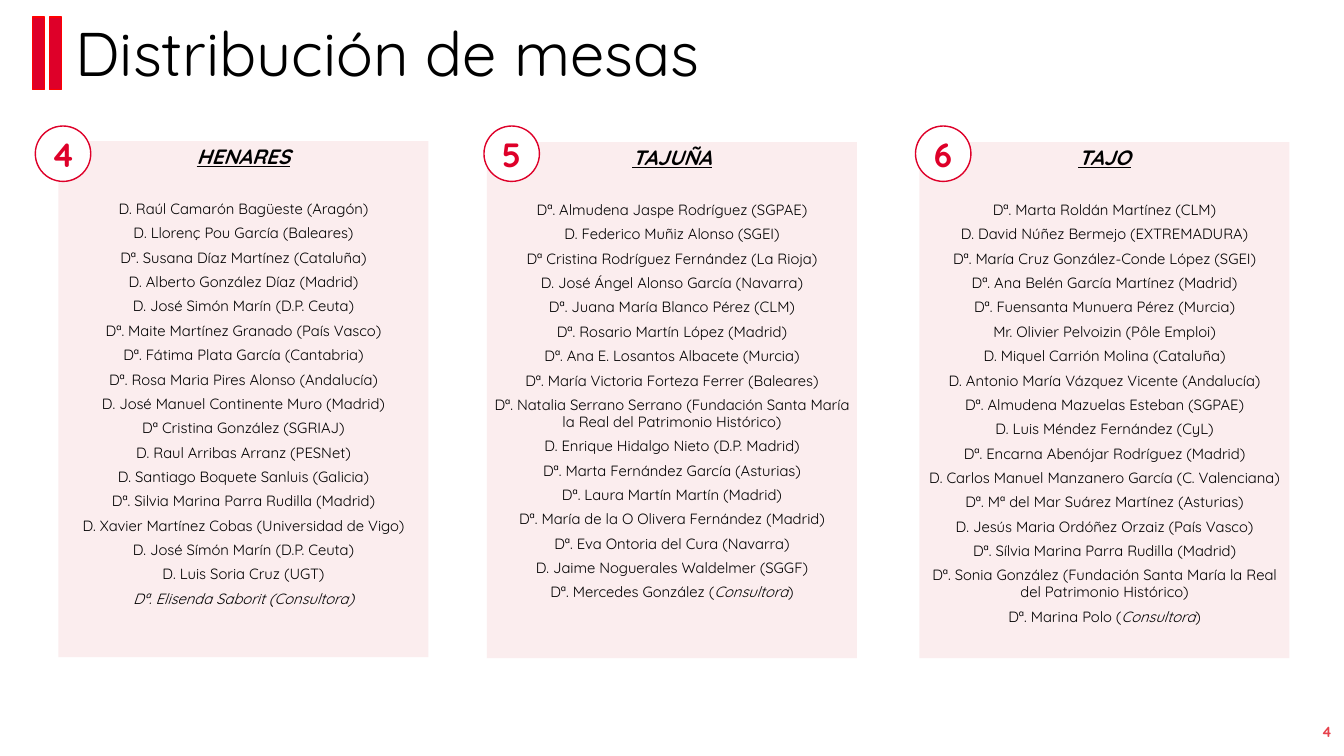
from dataclasses import dataclass

from lxml import etree
from pptx import Presentation
from pptx.dml.color import RGBColor
from pptx.enum import shapes, text
from pptx.oxml.ns import qn
from pptx.util import Inches, Pt


@dataclass(frozen=True)
class Theme:
    font: str = "Quicksand"
    black: str = "000000"
    white: str = "FFFFFF"
    crimson: str = "DE0029"
    bar_line: str = "FF0000"
    page_number: str = "E6414C"
    panel: str = "F1BDC1"
    panel_opacity: int = 27
    title_size: float = 44
    badge_size: float = 24
    heading_size: float = 14.8
    guest_size: float = 10.6
    page_size: float = 10.5


@dataclass(frozen=True)
class Table:
    """A dinner table; guest text between asterisks is italic."""
    number: int
    name: str
    panel_left: float
    panel_top: float
    badge_left: float
    guests: tuple[str, ...]


THEME = Theme()
PANEL_WIDTH, PANEL_HEIGHT = 3.67, 5.12
BADGE_TOP, BADGE_SIZE = 1.25, 0.55
BAR_LEFTS = (0.32, 0.49)

TABLES = (
    Table(4, "HENARES", 0.58, 1.4, 0.35, (
        "D. Raúl Camarón Bagüeste (Aragón)",
        "D. Llorenç Pou García (Baleares)",
        "Dª. Susana Díaz Martínez (Cataluña)",
        "D. Alberto González Díaz (Madrid)",
        "D. José Simón Marín (D.P. Ceuta)",
        "Dª. Maite Martínez Granado (País Vasco)",
        "Dª. Fátima Plata García (Cantabria)",
        "Dª. Rosa Maria Pires Alonso (Andalucía)",
        "D. José Manuel Continente Muro (Madrid)",
        "Dª Cristina González (SGRIAJ)",
        "D. Raul Arribas Arranz (PESNet)",
        "D. Santiago Boquete Sanluis (Galicia)",
        "Dª. Silvia Marina Parra Rudilla (Madrid)",
        "D. Xavier Martínez Cobas (Universidad de Vigo)",
        "D. José Símón Marín (D.P. Ceuta)",
        "D. Luis Soria Cruz (UGT)",
        "*Dª. Elisenda Saborit (Consultora)*",
    )),
    Table(5, "TAJUÑA", 4.83, 1.41, 4.8, (
        "Dª. Almudena Jaspe Rodríguez (SGPAE)",
        "D. Federico Muñiz Alonso (SGEI)",
        "Dª Cristina Rodríguez Fernández (La Rioja)",
        "D. José Ángel Alonso García (Navarra)",
        "Dª. Juana María Blanco Pérez (CLM)",
        "Dª. Rosario Martín López (Madrid)",
        "Dª. Ana E. Losantos Albacete (Murcia)",
        "Dª. María Victoria Forteza Ferrer (Baleares)",
        "Dª. Natalia Serrano Serrano (Fundación Santa María la Real del Patrimonio Histórico)",
        "D. Enrique Hidalgo Nieto (D.P. Madrid)",
        "Dª. Marta Fernández García (Asturias)",
        "Dª. Laura Martín Martín (Madrid)",
        "Dª. María de la O Olivera Fernández (Madrid)",
        "Dª. Eva Ontoria del Cura (Navarra)",
        "D. Jaime Noguerales Waldelmer (SGGF)",
        "Dª. Mercedes González (*Consultora*)",
    )),
    Table(6, "TAJO", 9.12, 1.41, 9.08, (
        "Dª. Marta Roldán Martínez (CLM)",
        "D. David Núñez Bermejo (EXTREMADURA)",
        "Dª. María Cruz González-Conde López (SGEI)",
        "Dª. Ana Belén García Martínez (Madrid)",
        "Dª. Fuensanta Munuera Pérez (Murcia)",
        "Mr. Olivier Pelvoizin (Pôle Emploi)",
        "D. Miquel Carrión Molina (Cataluña)",
        "D. Antonio María Vázquez Vicente (Andalucía)",
        "Dª. Almudena Mazuelas Esteban (SGPAE)",
        "D. Luis Méndez Fernández (CyL)",
        "Dª. Encarna Abenójar Rodríguez (Madrid)",
        "D. Carlos Manuel Manzanero García (C. Valenciana)",
        "Dª. Mª del Mar Suárez Martínez (Asturias)",
        "D. Jesús Maria Ordóñez Orzaiz (País Vasco)",
        "Dª. Sílvia Marina Parra Rudilla (Madrid)",
        "Dª. Sonia González (Fundación Santa María la Real del Patrimonio Histórico)",
        "Dª. Marina Polo (*Consultora*)",
    )),
)


def style_font(font, size: float, color: str, bold: bool = False, italic: bool = False) -> None:
    font.name = THEME.font
    font.size = Pt(size)
    font.color.rgb = RGBColor.from_string(color)
    font.bold = bold
    font.italic = italic


def set_insets(frame, left: float = 0, top: float = 0, right: float = 0, bottom: float = 0) -> None:
    frame.margin_left, frame.margin_top = Inches(left), Inches(top)
    frame.margin_right, frame.margin_bottom = Inches(right), Inches(bottom)


def add_filled_shape(parent, kind, box: tuple[float, ...], fill: str, line: str | None = None):
    shape = parent.shapes.add_shape(kind, *map(Inches, box))
    shape.shadow.inherit = False
    shape.fill.solid()
    shape.fill.fore_color.rgb = RGBColor.from_string(fill)
    if line:
        shape.line.color.rgb = RGBColor.from_string(line)
        shape.line.width = Pt(1)
    else:
        shape.line.fill.background()
    return shape


def set_opacity(shape, percent: int) -> None:
    color = shape.fill._xPr.find(qn("a:solidFill"))[0]
    etree.SubElement(color, qn("a:alpha")).set("val", str(percent * 1000))


def add_title(slide) -> None:
    title = slide.shapes.title
    title.left, title.top, title.width, title.height = map(Inches, (0.75, 0.17, 8.04, 0.72))
    frame = title.text_frame
    frame.text = "Distribución de mesas"
    frame.vertical_anchor = text.MSO_ANCHOR.BOTTOM
    set_insets(frame)
    paragraph = frame.paragraphs[0]
    paragraph.alignment = text.PP_ALIGN.LEFT
    paragraph.line_spacing = 0.9
    style_font(paragraph.runs[0].font, THEME.title_size, THEME.black)


def add_guest(frame, guest: str, is_last: bool) -> None:
    paragraph = frame.add_paragraph()
    paragraph.alignment = text.PP_ALIGN.CENTER
    paragraph.line_spacing = 0.95
    paragraph.space_after = Pt(0 if is_last else 5.3)
    for index, part in enumerate(guest.split("*")):
        if part:
            run = paragraph.add_run()
            run.text = part
            style_font(run.font, THEME.guest_size, THEME.black, italic=index % 2 == 1)


def add_table_panel(slide, table: Table) -> None:
    group = slide.shapes.add_group_shape()
    panel = add_filled_shape(group, shapes.MSO_SHAPE.RECTANGLE,
                             (table.panel_left, table.panel_top, PANEL_WIDTH, PANEL_HEIGHT),
                             THEME.panel)
    set_opacity(panel, THEME.panel_opacity)
    frame = panel.text_frame
    frame.word_wrap = True
    frame.vertical_anchor = text.MSO_ANCHOR.TOP
    set_insets(frame, 0.04, 0.04, 0.04, 0.02)
    frame.text = table.name
    heading = frame.paragraphs[0]
    heading.alignment = text.PP_ALIGN.CENTER
    heading.line_spacing = 0.95
    heading.space_after = Pt(23)
    style_font(heading.runs[0].font, THEME.heading_size, THEME.black, bold=True, italic=True)
    heading.runs[0].font.underline = True
    for position, guest in enumerate(table.guests, start=1):
        add_guest(frame, guest, position == len(table.guests))

    badge = add_filled_shape(group, shapes.MSO_SHAPE.OVAL,
                             (table.badge_left, BADGE_TOP, BADGE_SIZE, BADGE_SIZE),
                             THEME.white, THEME.crimson)
    set_insets(badge.text_frame)
    badge.text_frame.text = str(table.number)
    badge.text_frame.vertical_anchor = text.MSO_ANCHOR.MIDDLE
    number = badge.text_frame.paragraphs[0]
    number.alignment = text.PP_ALIGN.CENTER
    style_font(number.runs[0].font, THEME.badge_size, THEME.crimson, bold=True)


def add_page_number(slide) -> None:
    frame = slide.shapes.add_textbox(*map(Inches, (12.73, 7.06, 0.58, 0.4))).text_frame
    frame.word_wrap = True
    frame.text = "4"
    frame.vertical_anchor = text.MSO_ANCHOR.MIDDLE
    paragraph = frame.paragraphs[0]
    paragraph.alignment = text.PP_ALIGN.RIGHT
    style_font(paragraph.runs[0].font, THEME.page_size, THEME.page_number, bold=True)


def main() -> None:
    presentation = Presentation()
    presentation.slide_width, presentation.slide_height = Inches(13.33), Inches(7.5)
    slide = presentation.slides.add_slide(presentation.slide_layouts[5])
    for left in BAR_LEFTS:
        add_filled_shape(slide, shapes.MSO_SHAPE.RECTANGLE, (left, 0.17, 0.12, 0.72),
                         THEME.crimson, THEME.bar_line)
    add_title(slide)
    for table in TABLES:
        add_table_panel(slide, table)
    add_page_number(slide)
    presentation.save("out.pptx")


if __name__ == "__main__":
    main()
